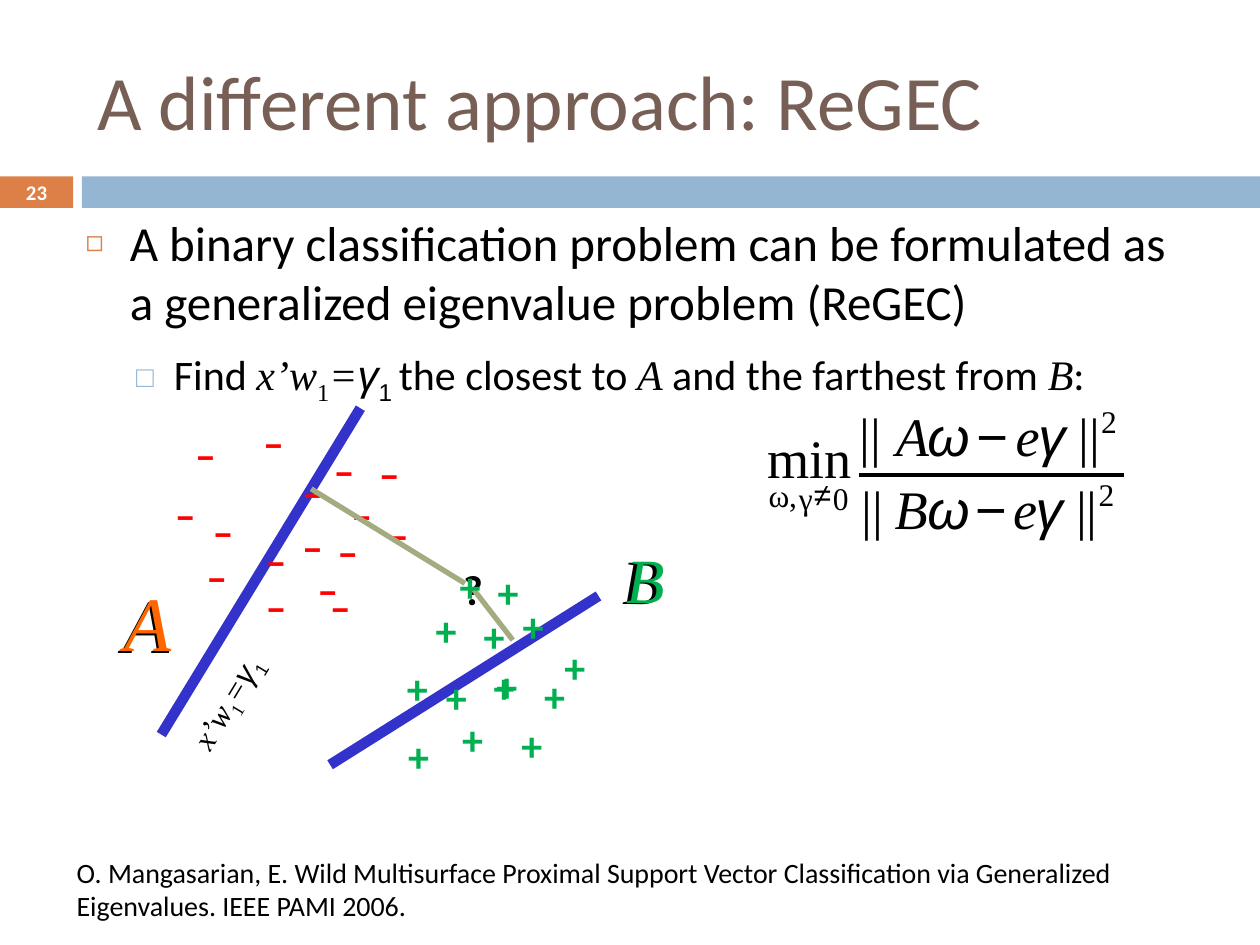
"""Build the slide that presents ReGEC as a generalized eigenvalue problem."""
from lxml.etree import SubElement
from pptx import Presentation
from pptx.dml.color import RGBColor
from pptx.enum.shapes import MSO_CONNECTOR as Connector, MSO_SHAPE as Preset
from pptx.enum.text import MSO_ANCHOR as Anchor, MSO_AUTO_SIZE as AutoSize, PP_ALIGN as Align
from pptx.oxml.ns import qn
from pptx.util import Inches, Pt

COLORS = {
    "title": "775F55", "orange": "DD8047", "blue": "94B6D2", "text": "000000",
    "white": "FFFFFF", "plane": "3333CC", "link": "A5AB81", "minus": "FF0000",
    "plus": "00B050", "class_a": "FF6600",
}
SANS, SERIF, MATH = "Calibri", "Times New Roman", "Arial"
PLANE_EQUATION = [("x’w", SERIF, True), ("1", SERIF, False, -25), ("=", SERIF, True),
                  ("γ", MATH, True)]


class SlideBuilder:
    """Holds the style and the current slide."""

    def __init__(self, slide):
        self.slide = slide
        self.shapes = slide.shapes

    def color(self, name):
        return RGBColor.from_string(COLORS[name])

    def run(self, paragraph, text, font=SANS, italic=False, baseline=0,
            size=24, color="text", bold=False):
        run = paragraph.add_run()
        run.text = text
        run.font.name, run.font.size = font, Pt(size)
        run.font.italic, run.font.bold = italic, bold
        run.font.color.rgb = self.color(color)
        if baseline:
            run.font._element.set("baseline", str(baseline * 1000))

    def place(self, holder, left, top, width, height):
        holder.left, holder.top = Inches(left), Inches(top)
        holder.width, holder.height = Inches(width), Inches(height)

    def title(self, text, box):
        title = self.slide.shapes.title
        self.place(title, *box)
        title.text_frame.auto_size = AutoSize.NONE
        title.text_frame.vertical_anchor = Anchor.MIDDLE
        paragraph = title.text_frame.paragraphs[0]
        paragraph.alignment = Align.LEFT
        self.run(paragraph, text, size=44, color="title")

    def body(self, items, box):
        body = self.slide.placeholders[1]
        self.place(body, *box)
        frame = body.text_frame
        frame.auto_size = AutoSize.NONE
        for level, (runs, size, margin, hanging, before, bullet) in enumerate(items):
            paragraph = frame.add_paragraph() if level else frame.paragraphs[0]
            paragraph.level = level
            paragraph.space_before, paragraph.space_after = Pt(before), Pt(5)
            for part in runs:
                self.run(paragraph, *part, size=size)
            self.bullet(paragraph, margin, hanging, *bullet)

    def bullet(self, paragraph, margin, hanging, mark, color, percent):
        props = paragraph._p.get_or_add_pPr()
        props.set("marL", str(Inches(margin)))
        props.set("indent", str(-Inches(hanging)))
        tint = SubElement(props, qn("a:buClr"))
        SubElement(tint, qn("a:srgbClr"), val=COLORS[color])
        SubElement(props, qn("a:buSzPct"), val=str(percent * 1000))
        SubElement(props, qn("a:buChar"), char=mark)

    def bar(self, color, *box):
        bar = self.shapes.add_shape(Preset.RECTANGLE, *map(Inches, box))
        bar.shadow.inherit = False
        bar.fill.solid()
        bar.fill.fore_color.rgb = self.color(color)
        bar.line.fill.background()

    def label(self, runs, box, wrap=False, inset=True, rotation=0, **style):
        label = self.shapes.add_textbox(*map(Inches, box))
        label.rotation = rotation
        frame = label.text_frame
        frame.word_wrap = wrap
        frame.auto_size = AutoSize.SHAPE_TO_FIT_TEXT
        if not inset:
            frame.margin_left = frame.margin_right = 0
            frame.margin_top = frame.margin_bottom = 0
        for part in runs:
            self.run(frame.paragraphs[0], *part, **style)
        return label

    def points(self, sign, color, width, places):
        for left, top in places:
            self.label([(sign,)], (left, top, width, 0.5), color=color, bold=True)

    def line(self, start, end, color, weight):
        line = self.shapes.add_connector(Connector.STRAIGHT, *map(Inches, start + end))
        line.line.color.rgb = self.color(color)
        line.line.width = Pt(weight)
        SubElement(line._element.spPr, qn("a:effectLst"))

    def symbol(self, text, left, top, width, font=SERIF, italic=False, size=31):
        height = 0.52 if size == 31 else 0.3
        self.label([(text, font, italic)], (left, top, width, height), inset=False, size=size)

    def formula(self):
        self.shapes = self.slide.shapes.add_group_shape().shapes
        self.line((6.82, 3.77), (8.92, 3.77), "text", 0)
        self.symbol("min", 6.09, 3.37, 0.68)
        self.symbol("ω,", 6.1, 3.78, 0.23, size=18)
        self.symbol("γ", 6.34, 3.8, 0.11, size=18)
        self.symbol("≠", 6.46, 3.77, 0.14, MATH, size=18)
        self.symbol("0", 6.61, 3.8, 0.13, size=18)
        for matrix, top, bar_left, shift in (("A", 3.19, 6.82, 0.02), ("B", 3.77, 6.84, 0)):
            self.symbol("||", bar_left, top, 0.18)
            self.symbol(matrix, 7.1 + shift / 2, top, 0.26, italic=True)
            self.symbol("ω", 7.36, top, 0.3, MATH, True)
            self.symbol("−", 7.74 + shift / 2, top, 0.24, MATH)
            self.symbol("e", 8.04 + shift, top, 0.19, italic=True)
            self.symbol("γ", 8.22 + shift, top, 0.18, MATH, True)
            self.symbol("||", 8.54 + shift, top, 0.18)
            self.symbol("2", 8.72 + shift, top, 0.13, size=18)
        self.shapes = self.slide.shapes


def main():
    deck = Presentation()
    deck.slide_width, deck.slide_height = Inches(10), Inches(7.5)
    page = SlideBuilder(deck.slides.add_slide(deck.slide_layouts[1]))

    page.bar("orange", 0, 1.4, 0.58, 0.25)
    page.bar("blue", 0.65, 1.4, 9.35, 0.25)
    page.title("A different approach: ReGEC", (0.67, 0.25, 8.92, 1.08))
    number = page.label([("23",)], (0, 1.39, 0.58, 0.27), wrap=True, inset=False,
                        size=11.9, color="white", bold=True)
    number.text_frame.auto_size = AutoSize.NONE
    number.text_frame.vertical_anchor = Anchor.MIDDLE
    number.text_frame.paragraphs[0].alignment = Align.CENTER

    problem = [("A binary classification problem can be formulated as "
                "a generalized eigenvalue problem (ReGEC)",)]
    goal = [("Find ",), *PLANE_EQUATION, ("1 ", MATH, False, -25), ("the closest to ",),
            ("A", SERIF, True), (" and the farthest from ",), ("B", SERIF, True), (":",)]
    page.body([(problem, 28, 0.35, 0.35, 7, ("◻", "orange", 60)),
               (goal, 24, 0.7, 0.3, 5.5, ("□", "blue", 70))], (0.58, 1.64, 9, 5.36))

    page.label([("?",)], (3.58, 4.42, 0.36, 0.5), bold=True)
    page.line((1.28, 5.83), (2.86, 3.24), "plane", 6)
    page.line((2.62, 6.07), (4.75, 4.73), "plane", 6)

    for name, size, color, box in (
            ("A", 44, "text", (0.87, 4.53, 0.61, 0.83)),
            ("B", 36, "text", (4.84, 4.25, 0.53, 0.7)),
            ("B", 36, "plus", (4.87, 4.24, 0.51, 0.7)),
            ("A", 44, "class_a", (0.89, 4.51, 0.57, 0.83))):
        page.label([(name, SERIF, True)], box, size=size, color=color)

    page.points("–", "minus", 0.46, [
        (2.52, 4.56), (2.42, 4.42), (1.29, 3.83), (1.59, 3.96), (1.45, 3.35), (1.99, 3.26),
        (2.3, 3.65), (2.55, 3.48), (2.91, 3.5), (2.69, 3.83), (2.58, 4.12), (2.3, 4.08),
        (2.01, 4.19), (1.54, 4.32), (2.01, 4.56), (2.98, 3.99)])
    page.points("+", "plus", 0.52, [
        (3.14, 5.75), (3.13, 5.21), (3.36, 4.75), (3.44, 5.28), (3.57, 5.61), (3.85, 4.45),
        (3.74, 4.8), (3.84, 5.19), (4.05, 4.72), (3.82, 5.2), (4.04, 5.66), (4.38, 5.04),
        (4.22, 5.27)])

    page.formula()
    page.line((3.69, 4.63), (2.47, 3.88), "link", 3)
    page.line((3.76, 4.68), (4.07, 5.08), "link", 3)
    page.points("+", "plus", 0.52, [(3.55, 4.4)])
    page.label([("O. Mangasarian, E. Wild Multisurface Proximal Support Vector Classification "
                 "via Generalized Eigenvalues. IEEE PAMI 2006.",)],
               (0.51, 6.74, 8.82, 0.64), wrap=True, size=16)
    page.label([*PLANE_EQUATION, ("1", MATH, False, -25)], (1.29, 5.37, 1.01, 0.4),
               rotation=301.2, size=18)
    deck.save("out.pptx")


if __name__ == "__main__":
    main()
